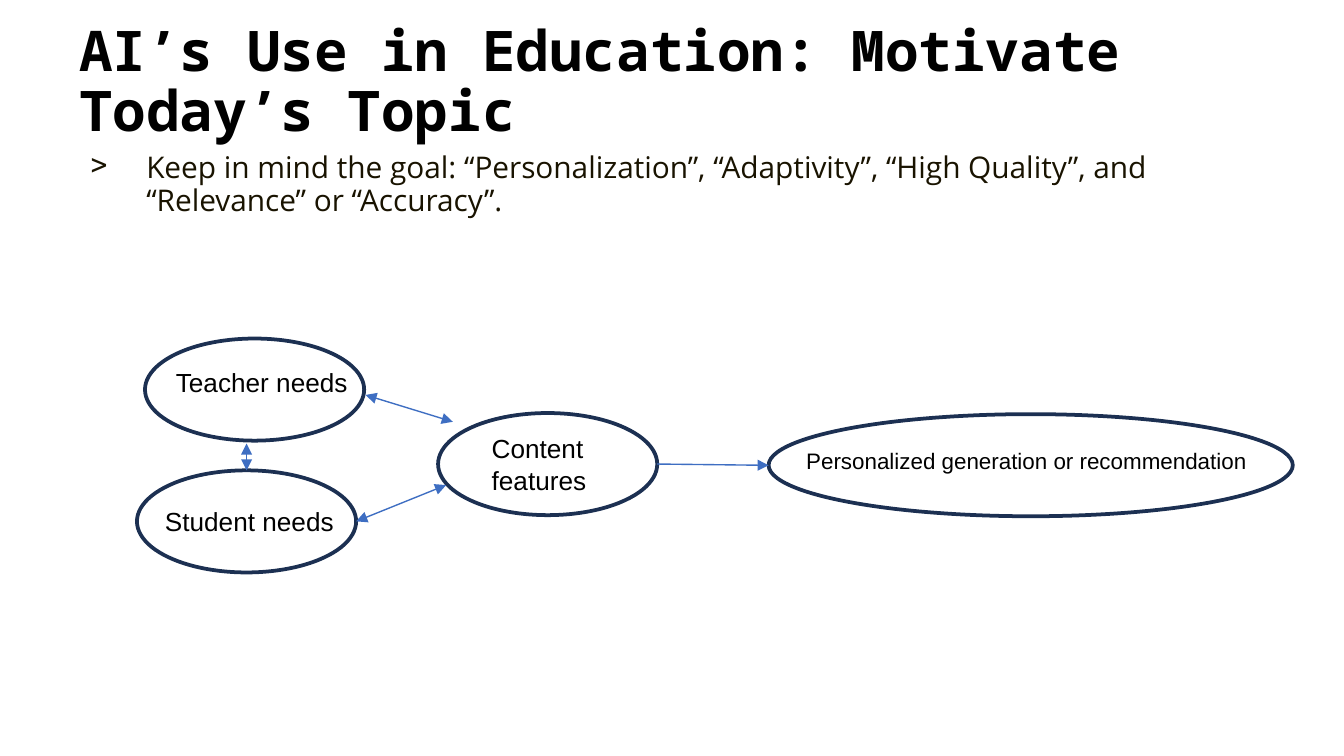
from lxml import etree
from pptx import Presentation
from pptx.dml.color import RGBColor
from pptx.enum.shapes import MSO_CONNECTOR, MSO_SHAPE
from pptx.enum.text import MSO_ANCHOR
from pptx.oxml.ns import qn
from pptx.util import Pt

STRAIGHT = MSO_CONNECTOR.STRAIGHT
ELLIPSE = MSO_SHAPE.OVAL
TOP, BOTTOM = MSO_ANCHOR.TOP, MSO_ANCHOR.BOTTOM

COLOURS = {
    "title": "000000",
    "body": "191300",
    "label": "000000",
    "outline": "1C3052",
    "arrow": "3E6EC2",
}
NODE_WIDTH, NODE_HEIGHT = 117.4, 54.7


def colour(name):
    return RGBColor.from_string(COLOURS[name])


def add_text(page, box, text, font, size, ink, anchor=TOP):
    text_box = page.shapes.add_textbox(*map(Pt, box))
    frame = text_box.text_frame
    frame.word_wrap = True
    frame.vertical_anchor = anchor
    para = frame.paragraphs[0]
    para.text = text
    para.font.name = font
    para.font.size = Pt(size)
    para.font.color.rgb = colour(ink)
    return para


def add_title(page, box):
    para = add_text(page, box, "AI’s Use in Education: Motivate Today’s Topic",
                    "Noto Sans Mono", 30, "title", BOTTOM)
    para.font.bold = True
    para.line_spacing = 0.9


def add_goal(page, box):
    text = ("Keep in mind the goal: “Personalization”, “Adaptivity”, "
            "“High Quality”, and “Relevance” or “Accuracy”.")
    para = add_text(page, box, text, "Open Sans", 16, "body")
    para.line_spacing = 0.9
    properties = para._p.get_or_add_pPr()
    properties.set("marL", str(Pt(36)))
    properties.set("indent", str(Pt(-30)))
    bullet = etree.Element(qn("a:buChar"), char=">")
    properties.find(qn("a:lnSpc")).addnext(bullet)


def add_node(page, box, label_box, label, size=14):
    node = page.shapes.add_shape(ELLIPSE, *map(Pt, box))
    node.shadow.inherit = False
    node.fill.background()
    node.line.color.rgb = colour("outline")
    node.line.width = Pt(2)
    add_text(page, label_box, label, "Arial", size, "label")


def add_arrow(page, start, end, both_ends=True):
    arrow = page.shapes.add_connector(STRAIGHT, *map(Pt, start + end))
    arrow.line.color.rgb = colour("arrow")
    arrow.line.width = Pt(0.75)
    line = arrow.line._get_or_add_ln()
    if both_ends:
        etree.SubElement(line, qn("a:headEnd"), type="triangle")
    etree.SubElement(line, qn("a:tailEnd"), type="triangle")
    etree.SubElement(arrow._element.spPr, qn("a:effectLst"))


def add_needs_diagram(page, box):
    left, top, width, height = box

    def place(x, y, *extent):
        return (left + x, top + y) + extent

    result_width = 280.8
    result_left = width - result_width
    nodes = [
        ((4.3, 0, NODE_WIDTH), (13.7, 11.5, 108.7, 24.5), "Teacher needs", 14),
        ((0, height - NODE_HEIGHT, NODE_WIDTH), (7.9, 85.7, 105.1, 24.5),
         "Student needs", 14),
        ((161.3, 39.9, NODE_WIDTH), (182.9, 46.8, 87.8, 41), "Content features", 14),
        ((result_left, 40.5, result_width), (351.4, 54.7, 255.6, 21.6),
         "Personalized generation or recommendation", 12),
    ]
    for (x, y, node_width), label_box, label, size in nodes:
        add_node(page, place(x, y, node_width, NODE_HEIGHT),
                 place(*label_box), label, size)

    arrows = [
        ((122.4, 30.2), (169.2, 44.6), True),
        ((NODE_WIDTH, 97.9), (165.6, 78.5), True),
        ((NODE_WIDTH / 2, 70.6), (NODE_WIDTH / 2, 56.2), True),
        ((278.7, 67.2), (result_left, 67.9), False),
    ]
    for start, end, both_ends in arrows:
        add_arrow(page, place(*start), place(*end), both_ends)


def main():
    deck = Presentation()
    deck.slide_width, deck.slide_height = Pt(720), Pt(405)
    page = deck.slides.add_slide(deck.slide_layouts[6])
    add_title(page, (35.3, 2.2, 645.1, 78.5))
    add_goal(page, (35.3, 78.5, 645.1, 58.3))
    add_needs_diagram(page, (73.4, 181.4, 619.2, 125.3))
    deck.save("out.pptx")


if __name__ == "__main__":
    main()
